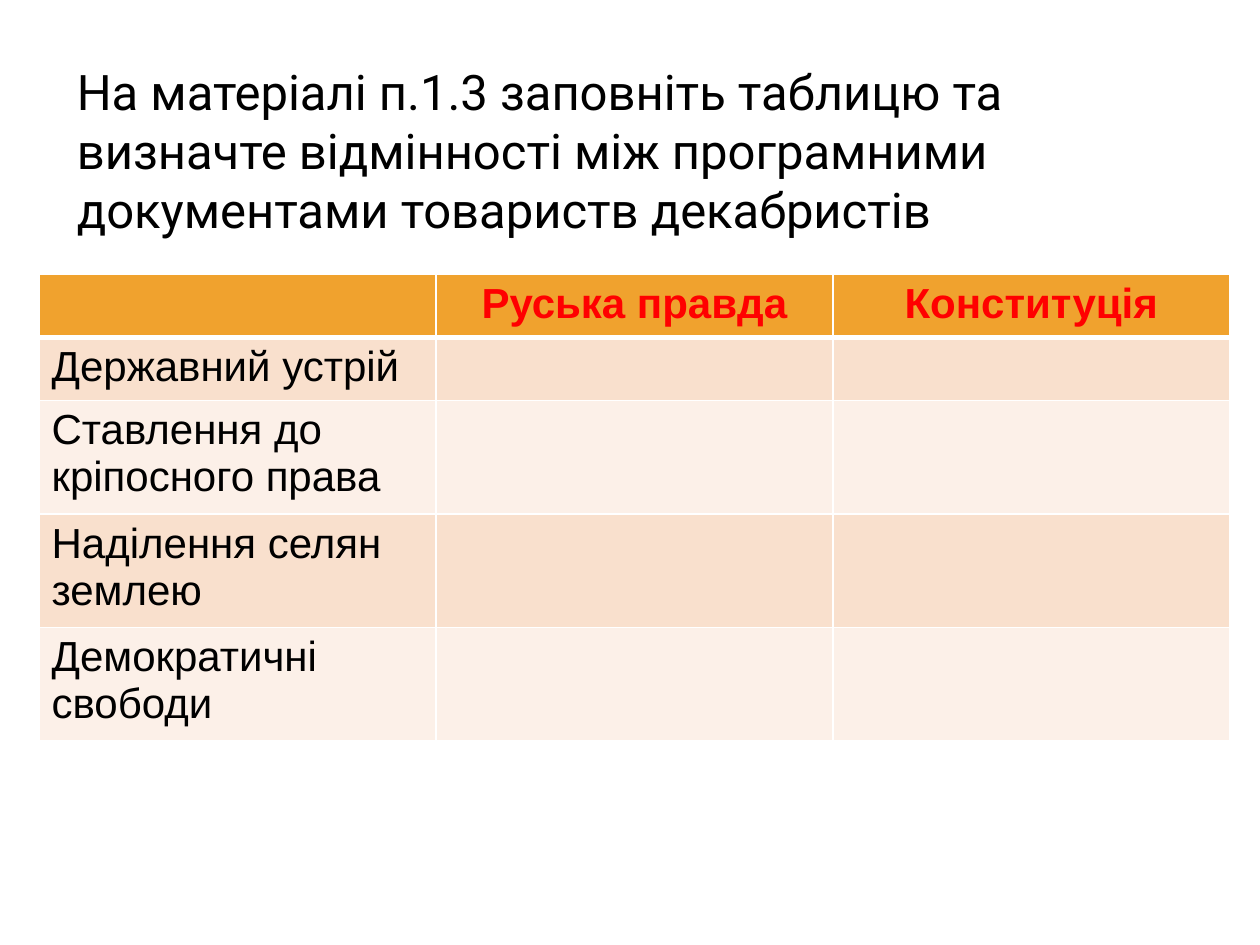
import pptx
import pptx.dml.color
import pptx.enum.text
import pptx.oxml.ns
import pptx.util
from dataclasses import dataclass
from lxml import etree

Inches, Pt = pptx.util.Inches, pptx.util.Pt
RGB = pptx.dml.color.RGBColor.from_string
PP_ALIGN = pptx.enum.text.PP_ALIGN
MSO_ANCHOR = pptx.enum.text.MSO_ANCHOR
qn = pptx.oxml.ns.qn


@dataclass
class Theme:
    title_font: str = "Roboto"
    body_font: str = "Arial"
    title_size: int = 28
    body_size: int = 24
    text: str = "000000"
    header_text: str = "FF0000"
    header_fill: str = "F0A22E"
    bands: tuple = ("F9E0CD", "FCF0E8")
    border: str = "FFFFFF"


theme = Theme()


def format_run(r, font, size, color, bold=False):
    r.font.name, r.font.size, r.font.bold = font, Pt(size), bold
    r.font.color.rgb = RGB(color)


def set_borders(cell, widths):
    """Draw solid borders; widths are points for left, right, top, bottom."""
    tcPr = cell._tc.get_or_add_tcPr()
    for i, (side, width) in enumerate(zip("LRTB", widths)):
        ln = etree.Element(qn(f"a:ln{side}"), w=str(Pt(width)))
        fill = etree.SubElement(ln, qn("a:solidFill"))
        etree.SubElement(fill, qn("a:srgbClr"), val=theme.border)
        tcPr.insert(i, ln)


prs = pptx.Presentation()
prs.slide_width, prs.slide_height = Inches(10), Inches(7.5)
s = prs.slides.add_slide(prs.slide_layouts[5])

# Title
title = s.shapes.title
title.left, title.top = Inches(0.51), Inches(0.44)
title.width, title.height = Inches(9.06), Inches(1.51)
tf = title.text_frame
tf.text = ("На матеріалі п.1.3 заповніть таблицю та визначте відмінності "
           "між програмними документами товариств декабристів")
tf.word_wrap = True
tf.auto_size = pptx.enum.text.MSO_AUTO_SIZE.NONE
tf.vertical_anchor = MSO_ANCHOR.TOP
p = tf.paragraphs[0]
p.alignment = PP_ALIGN.LEFT
format_run(p.runs[0], theme.title_font, theme.title_size, theme.text)

# Comparison table
rows = [
    ("", "Руська правда", "Конституція"),
    ("Державний устрій", "", ""),
    ("Ставлення до кріпосного права", "", ""),
    ("Наділення селян землею", "", ""),
    ("Демократичні свободи", "", ""),
]
row_heights = [0.5, 0.5, 0.9, 0.9, 0.9]
table = s.shapes.add_table(len(rows), 3, Inches(0.31), Inches(2.18),
                           Inches(9.45), Inches(sum(row_heights))).table
for column in table.columns:
    column.width = Inches(3.15)

for i, (texts, height) in enumerate(zip(rows, row_heights)):
    header = i == 0
    table.rows[i].height = Inches(height)
    for j, text in enumerate(texts):
        cell = table.cell(i, j)
        cell.fill.solid()
        cell.fill.fore_color.rgb = RGB(
            theme.header_fill if header else theme.bands[(i - 1) % 2])
        set_borders(cell, (1, 1, 3 if i == 1 else 1, 3 if header else 1))
        if text:
            p = cell.text_frame.paragraphs[0]
            p.text = text
            p.alignment = PP_ALIGN.CENTER if header else PP_ALIGN.LEFT
            format_run(p.runs[0], theme.body_font, theme.body_size,
                       theme.header_text if header else theme.text, header)

prs.save("out.pptx")
